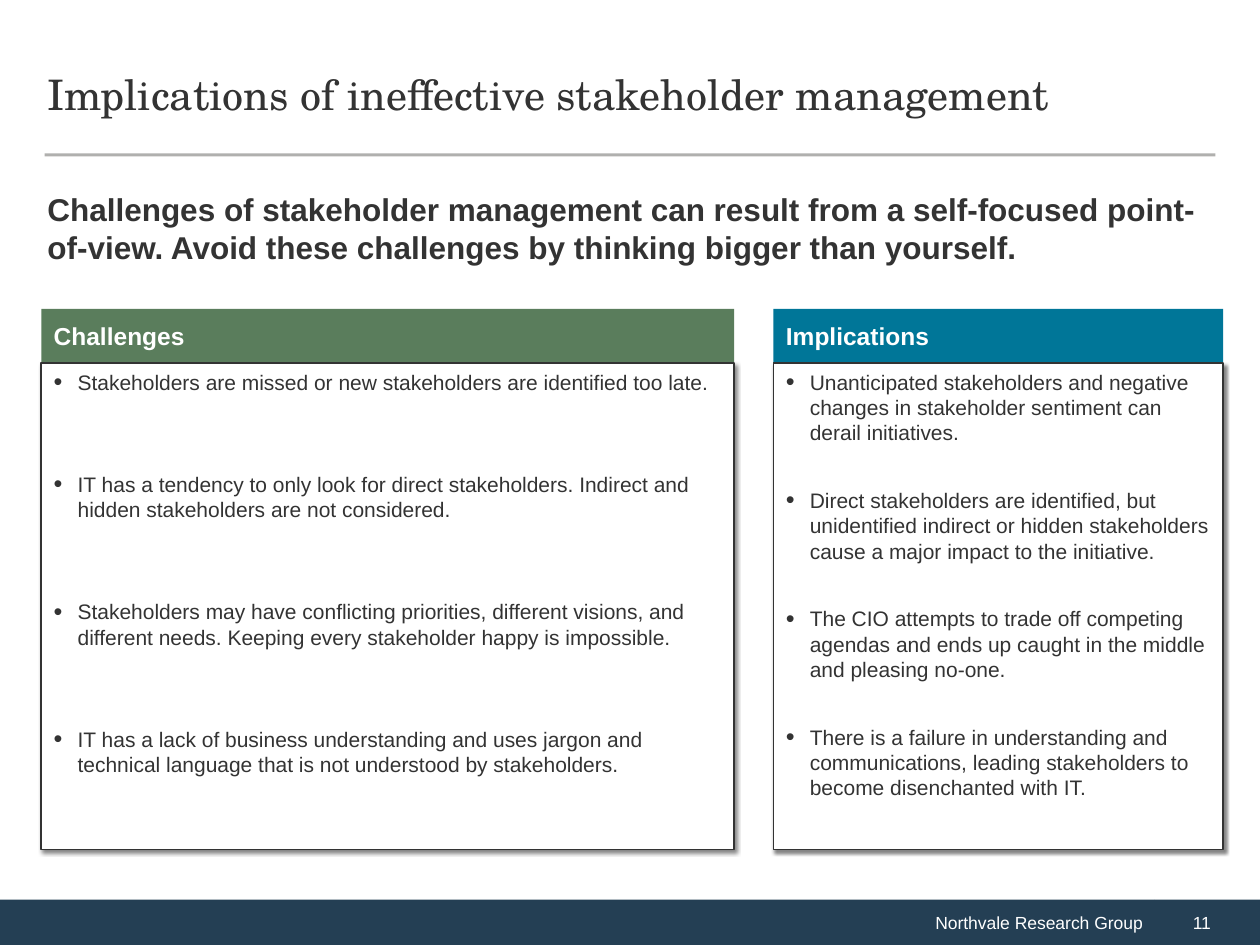
from lxml import etree
from pptx import Presentation
from pptx.dml.color import RGBColor
from pptx.enum.shapes import MSO_CONNECTOR, MSO_SHAPE
from pptx.enum.text import MSO_ANCHOR, PP_ALIGN
from pptx.oxml import parse_xml
from pptx.oxml.ns import nsdecls, qn
from pptx.util import Pt

RECT = MSO_SHAPE.RECTANGLE
STRAIGHT = MSO_CONNECTOR.STRAIGHT
TOP, MIDDLE = MSO_ANCHOR.TOP, MSO_ANCHOR.MIDDLE
LEFT, RIGHT = PP_ALIGN.LEFT, PP_ALIGN.RIGHT

COLORS = {"text": "333333", "white": "FFFFFF", "footer": "243F54", "rule": "45433E",
          "green": "5A7D5C", "blue": "007698", "shadow": "858585"}


def rgb(name):
    return RGBColor.from_string(COLORS[name])


def add_box(x, y, w, h, lines, size, color="text", fill=None, bold=False,
            font="Arial", anchor=MIDDLE, align=LEFT):
    """Add a rectangle, or a text box without fill, one paragraph per line."""
    if fill:
        sp = s.shapes.add_shape(RECT, Pt(x), Pt(y), Pt(w), Pt(h))
        sp.shadow.inherit = False
        sp.fill.solid()
        sp.fill.fore_color.rgb = rgb(fill)
        sp.line.fill.background()
    else:
        sp = s.shapes.add_textbox(Pt(x), Pt(y), Pt(w), Pt(h))
    tf = sp.text_frame
    tf.word_wrap = True
    tf.vertical_anchor = anchor
    tf.text = "\n".join(lines)
    for p in tf.paragraphs:
        p.alignment = align
        f = p.runs[0].font
        f.name, f.size, f.bold = font, Pt(size), bold
        f.color.rgb = rgb(color)
    return sp


prs = Presentation()
prs.slide_width, prs.slide_height = Pt(720), Pt(540)
s = prs.slides.add_slide(prs.slide_layouts[6])

# Footer band and page number
add_box(0, 514, 660, 26.5, ["Northvale Research Group"], 10, "white", "footer", align=RIGHT)
sp = add_box(660, 514, 60, 26.5, ["11"], 10, "white", "footer")
sp.text_frame.margin_left = Pt(21.6)

# Rule under the title
rule = s.shapes.add_connector(STRAIGHT, Pt(25.5), Pt(88.5), Pt(694.5), Pt(88.5))
rule.line.color.rgb = rgb("rule")
rule.line.width = Pt(1.75)
clr = rule._element.spPr.find(".//" + qn("a:srgbClr"))
etree.SubElement(clr, qn("a:alpha")).set("val", "42000")
etree.SubElement(rule._element.spPr, qn("a:effectLst"))

# Title and key message
sp = add_box(20, 21, 679, 67.5, ["Implications of ineffective stakeholder management"], 24,
             font="TeX Gyre Schola")
sp.text_frame.paragraphs[0].line_spacing = Pt(26)
add_box(20, 105, 679, 62.5,
        ["Challenges of stakeholder management can result from a self-focused point-of-view. "
         "Avoid these challenges by thinking bigger than yourself."],
        18, bold=True, anchor=TOP)

# Columns: left, width, header fill, gap between bullets, heading, bullets
columns = [
    (23.6, 396, "green", 44, "Challenges", [
        "Stakeholders are missed or new stakeholders are identified too late.",
        "IT has a tendency to only look for direct stakeholders. Indirect and hidden "
        "stakeholders are not considered.",
        "Stakeholders may have conflicting priorities, different visions, and different needs. "
        "Keeping every stakeholder happy is impossible.",
        "IT has a lack of business understanding and uses jargon and technical language that "
        "is not understood by stakeholders."]),
    (442, 257, "blue", 24.4, "Implications", [
        "Unanticipated stakeholders and negative changes in stakeholder sentiment can derail "
        "initiatives.",
        "Direct stakeholders are identified, but unidentified indirect or hidden stakeholders "
        "cause a major impact to the initiative.",
        "The CIO attempts to trade off competing agendas and ends up caught in the middle and "
        "pleasing no-one.",
        "There is a failure in understanding and communications, leading stakeholders to "
        "become disenchanted with IT."]),
]
for x, w, fill, gap, heading, bullets in columns:
    add_box(x, 176.5, w, 31, [heading], 14, "white", fill, bold=True)
    sp = add_box(x, 207.5, w, 278, bullets, 12, fill="white", anchor=TOP)
    sp.line.color.rgb = rgb("text")
    sp.line.width = Pt(1)

    # Soft shadow below the panel
    effects = sp._element.spPr.find(qn("a:effectLst"))
    effects.append(parse_xml(
        f'<a:outerShdw {nsdecls("a")} blurRad="{Pt(2)}" dist="{Pt(2)}" dir="3600000" '
        f'rotWithShape="0"><a:srgbClr val="{COLORS["shadow"]}"/></a:outerShdw>'))

    # Bullets with a hanging indent
    for i, p in enumerate(sp.text_frame.paragraphs):
        p.space_before = Pt(gap if i else 5)
        pPr = p._p.get_or_add_pPr()
        pPr.set("marL", str(Pt(13.7)))
        pPr.set("indent", str(-Pt(13.7)))
        bu_clr = etree.SubElement(pPr, qn("a:buClr"))
        etree.SubElement(bu_clr, qn("a:srgbClr")).set("val", COLORS["text"])
        etree.SubElement(pPr, qn("a:buSzPct")).set("val", "120000")
        etree.SubElement(pPr, qn("a:buFont")).set("typeface", "Arial")
        etree.SubElement(pPr, qn("a:buChar")).set("char", "•")

prs.save("out.pptx")
